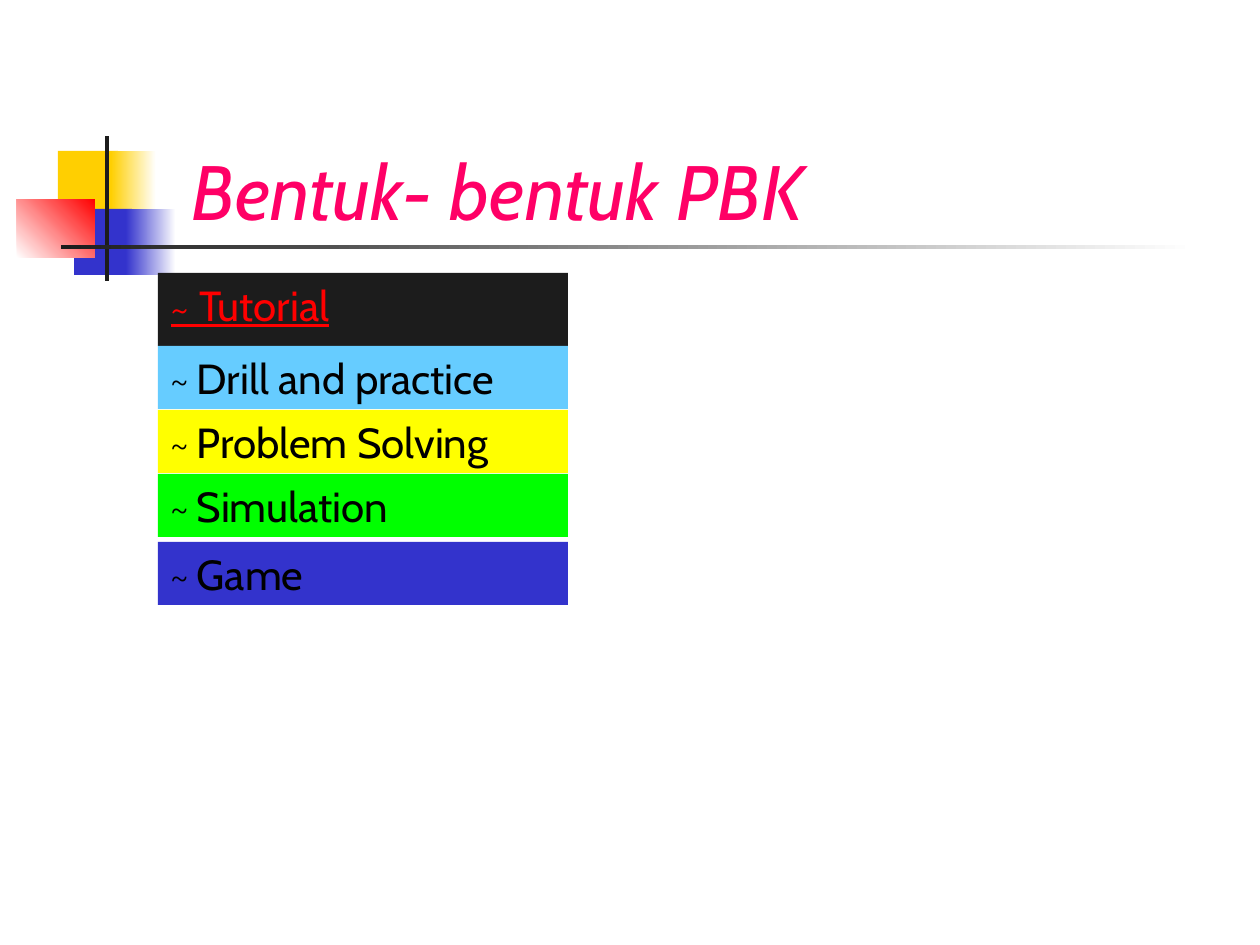
from dataclasses import dataclass

from lxml import etree
from pptx import Presentation
from pptx.dml.color import RGBColor
from pptx.enum.shapes import MSO_SHAPE
from pptx.enum.text import MSO_ANCHOR, MSO_AUTO_SIZE, PP_ALIGN
from pptx.oxml.ns import qn
from pptx.util import Emu, Inches, Pt

RECT = MSO_SHAPE.RECTANGLE
LEFT = PP_ALIGN.LEFT
TOP, BOTTOM = MSO_ANCHOR.TOP, MSO_ANCHOR.BOTTOM
FIXED, GROW = MSO_AUTO_SIZE.NONE, MSO_AUTO_SIZE.SHAPE_TO_FIT_TEXT

SCALE = Inches(1) / 126
FACE, MARK = "Cabin", "Montserrat"
WHITE, DARK, BLUE, GOLD, RED = "FFFFFF", "1C1C1C", "3333CC", "FFCF01", "FF0000"


@dataclass
class Block:
    x: int
    y: int
    w: int
    h: int
    fill: str
    fade: str = ""
    angle: int = 0


@dataclass
class Item:
    y: int
    text: str
    fill: str


BLOCKS = [
    Block(58, 151, 60, 66, GOLD),
    Block(111, 151, 45, 66, GOLD, WHITE),
    Block(74, 209, 58, 66, BLUE),
    Block(126, 209, 50, 66, BLUE, WHITE),
    Block(17, 199, 78, 59, WHITE, RED, 45),
    Block(105, 136, 4, 145, DARK),
    Block(61, 245, 1134, 4, DARK, WHITE),
]
ITEMS = [
    Item(346, "Drill and practice", "66CCFF"),
    Item(410, "Problem Solving", "FFFF00"),
    Item(474, "Simulation", "00FF00"),
    Item(542, "Game", BLUE),
]


def px(n: int) -> Emu:
    return Emu(round(n * SCALE))


def color(code: str) -> RGBColor:
    return RGBColor.from_string(code)


def paint(shape, code: str) -> None:
    shape.fill.solid()
    shape.fill.fore_color.rgb = color(code)


def place(shape, x: int, y: int, w: int, h: int) -> None:
    shape.left, shape.top, shape.width, shape.height = map(px, (x, y, w, h))


def style(font, size: int, code: str, face: str = FACE) -> None:
    font.name, font.size = face, Pt(size)
    font.color.rgb = color(code)


def draw_block(slide, block: Block) -> None:
    shape = slide.shapes.add_shape(RECT, *map(px, (block.x, block.y, block.w, block.h)))
    shape.shadow.inherit = False
    shape.line.fill.background()
    if not block.fade:
        paint(shape, block.fill)
        return
    shape.fill.gradient()
    shape.fill.gradient_angle = block.angle
    for stop, code in zip(shape.fill.gradient_stops, (block.fill, block.fade)):
        stop.color.rgb = color(code)


def fill_holder(shape, text: str, size: int, code: str, anchor):
    frame = shape.text_frame
    frame.text = text
    frame.auto_size = FIXED
    frame.vertical_anchor = anchor
    para = frame.paragraphs[0]
    para.alignment = LEFT
    style(para.font, size, code)
    return para


def draw_item(slide, item: Item) -> None:
    box = slide.shapes.add_textbox(*map(px, (158, item.y, 410, 63)))
    paint(box, item.fill)
    frame = box.text_frame
    frame.word_wrap = True
    frame.auto_size = GROW
    para = frame.paragraphs[0]
    for text, size, face in (("~ ", 18, MARK), (item.text, 24, FACE)):
        run = para.add_run()
        run.text = text
        style(run.font, size, "000000", face)


def main() -> None:
    deck = Presentation()
    deck.slide_width, deck.slide_height = Inches(10), Inches(7.5)
    slide = deck.slides.add_slide(deck.slide_layouts[1])
    title, body = slide.placeholders

    # Corner squares and rules
    for block in BLOCKS:
        draw_block(slide, block)

    # Title
    place(title, 179, 84, 977, 158)
    head = fill_holder(title, "Bentuk- bentuk PBK", 44, "FF0066", BOTTOM)
    head.font.italic = True

    # First entry, without its bullet
    place(body, 158, 273, 410, 73)
    paint(body, DARK)
    first = fill_holder(body, "~ Tutorial", 24, RED, TOP)
    first.font.underline = True
    props = first._p.get_or_add_pPr()
    props.set("marL", str(Inches(0.38)))
    props.set("indent", str(-Inches(0.38)))
    etree.SubElement(props, qn("a:buNone"))
    # Schema order: the bullet precedes the default run properties
    props.append(props.find(qn("a:defRPr")))

    # Placeholders lie above the corner squares
    for shape in (title, body):
        slide.shapes._spTree.append(shape._element)

    # Other entries
    for item in ITEMS:
        draw_item(slide, item)

    deck.save("out.pptx")


if __name__ == "__main__":
    main()
